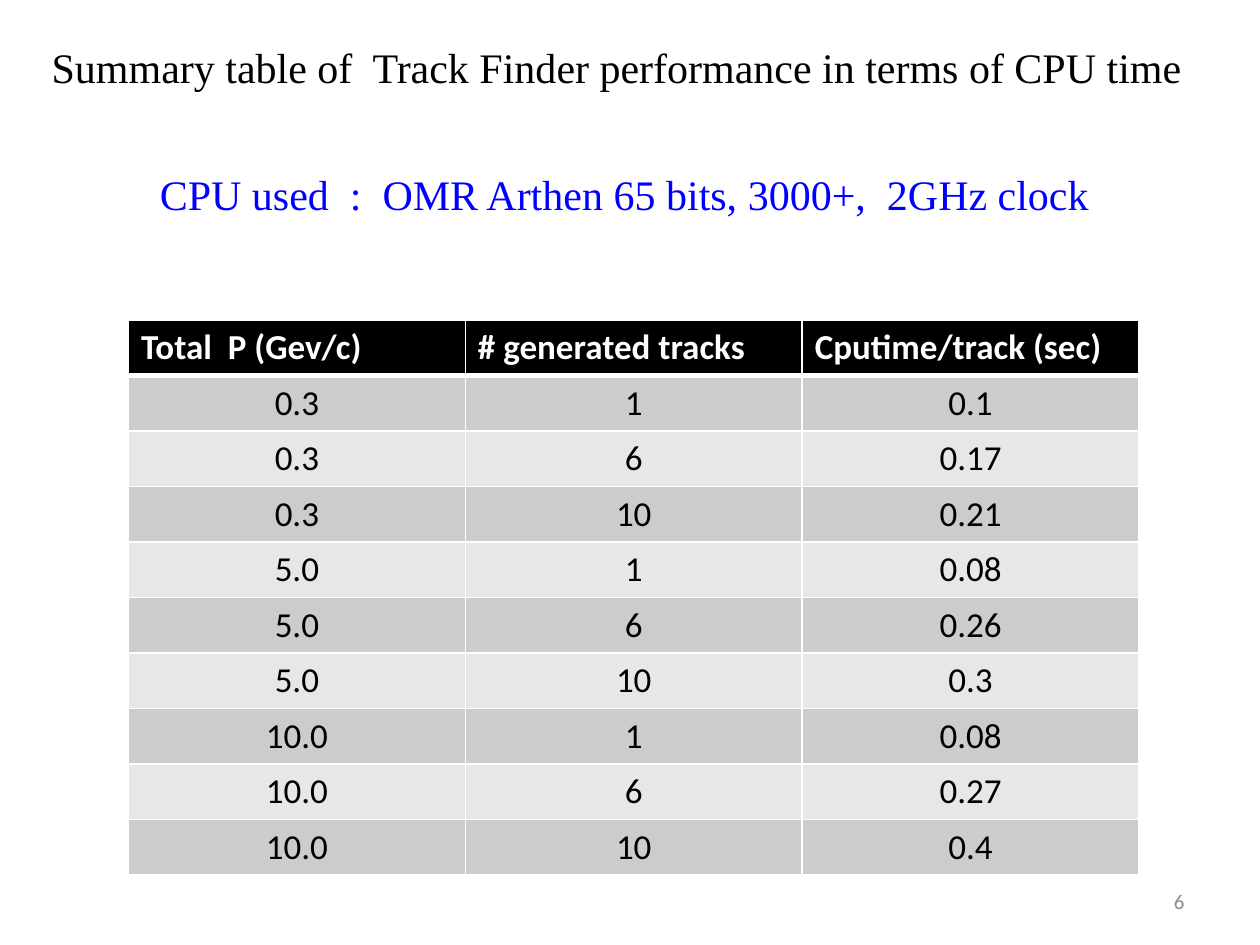
import dataclasses

import pptx
import pptx.dml.color
import pptx.enum.text
import pptx.oxml
import pptx.oxml.ns
import pptx.util
from pptx.util import Inches

Align = pptx.enum.text.PP_ALIGN
Anchor = pptx.enum.text.MSO_ANCHOR


@dataclasses.dataclass(frozen=True)
class Theme:
    serif: str = "Times New Roman"
    sans: str = "Calibri"
    black: str = "000000"
    white: str = "FFFFFF"
    blue: str = "0000FF"
    gray: str = "8C8C8C"
    bands: tuple = ("CCCCCC", "E7E7E7")
    head: int = 24
    cell: int = 20
    foot: int = 12


THEME = Theme()
HEADS = ("Total  P (Gev/c)", "# generated tracks", "Cputime/track (sec)")
TIMES = {
    "0.3": ("0.1", "0.17", "0.21"),
    "5.0": ("0.08", "0.26", "0.3"),
    "10.0": ("0.08", "0.27", "0.4"),
}
TRACKS = ("1", "6", "10")


def color(code):
    return pptx.dml.color.RGBColor.from_string(code)


def style(para, face, size, code, align=Align.LEFT, bold=False):
    para.alignment = align
    font = para.font
    font.name, font.size, font.bold = face, pptx.util.Pt(size), bold
    font.color.rgb = color(code)


def place(shape, left, top, width, height):
    shape.left, shape.top = Inches(left), Inches(top)
    shape.width, shape.height = Inches(width), Inches(height)


def write(shape, text, box, look, anchor=Anchor.TOP, wrap=False):
    """Place a text shape and fill it with one styled line."""
    place(shape, *box)
    frame = shape.text_frame
    frame.text = text
    frame.word_wrap = wrap
    frame.auto_size = pptx.enum.text.MSO_AUTO_SIZE.NONE
    frame.vertical_anchor = anchor
    style(frame.paragraphs[0], *look)


def edge(cell, below):
    """Draw white borders; the bottom one is below points wide."""
    props = cell._tc.get_or_add_tcPr()
    for side, width in (("L", 1), ("R", 1), ("T", 1), ("B", below)):
        props.append(pptx.oxml.parse_xml(
            f'<a:ln{side} {pptx.oxml.ns.nsdecls("a")} w="{pptx.util.Pt(width)}">'
            f'<a:solidFill><a:srgbClr val="{THEME.white}"/></a:solidFill>'
            f'</a:ln{side}>'))


def fill(cell, text, back, look, below=1):
    edge(cell, below)
    cell.fill.solid()
    cell.fill.fore_color.rgb = color(back)
    cell.text = text
    style(cell.text_frame.paragraphs[0], THEME.sans, THEME.cell, *look)


def add_grid(slide):
    rows = [(power, count, time) for power, times in TIMES.items()
            for count, time in zip(TRACKS, times)]
    size = len(rows) + 1
    grid = slide.shapes.add_table(
        size, len(HEADS), Inches(1.02), Inches(2.54),
        Inches(8.02), Inches(0.41 * size)).table
    for col, text in enumerate(HEADS):
        fill(grid.cell(0, col), text, THEME.black,
             (THEME.white, Align.LEFT, True), below=3)
    for row, values in enumerate(rows, 1):
        back = THEME.bands[(row - 1) % 2]
        for col, text in enumerate(values):
            fill(grid.cell(row, col), text, back, (THEME.black, Align.CENTER))


def add_text(slide, *args, **more):
    write(slide.shapes.add_textbox(0, 0, 0, 0), *args, **more)


def main():
    deck = pptx.Presentation()
    deck.slide_width, deck.slide_height = Inches(10), Inches(7.5)
    slide = deck.slides.add_slide(deck.slide_layouts[5])
    write(slide.shapes.title,
          "Summary table of  Track Finder performance in terms of CPU time",
          (0.31, 0.28, 9.25, 0.5), (THEME.serif, THEME.head, THEME.black))
    add_text(slide, "CPU used  :  OMR Arthen 65 bits, 3000+,  2GHz clock",
             (1.17, 1.29, 7.58, 0.5), (THEME.serif, THEME.head, THEME.blue))
    add_grid(slide)
    add_text(slide, "6", (7.17, 6.95, 2.33, 0.4),
             (THEME.sans, THEME.foot, THEME.gray, Align.RIGHT),
             anchor=Anchor.MIDDLE, wrap=True)
    deck.save("out.pptx")


if __name__ == "__main__":
    main()
